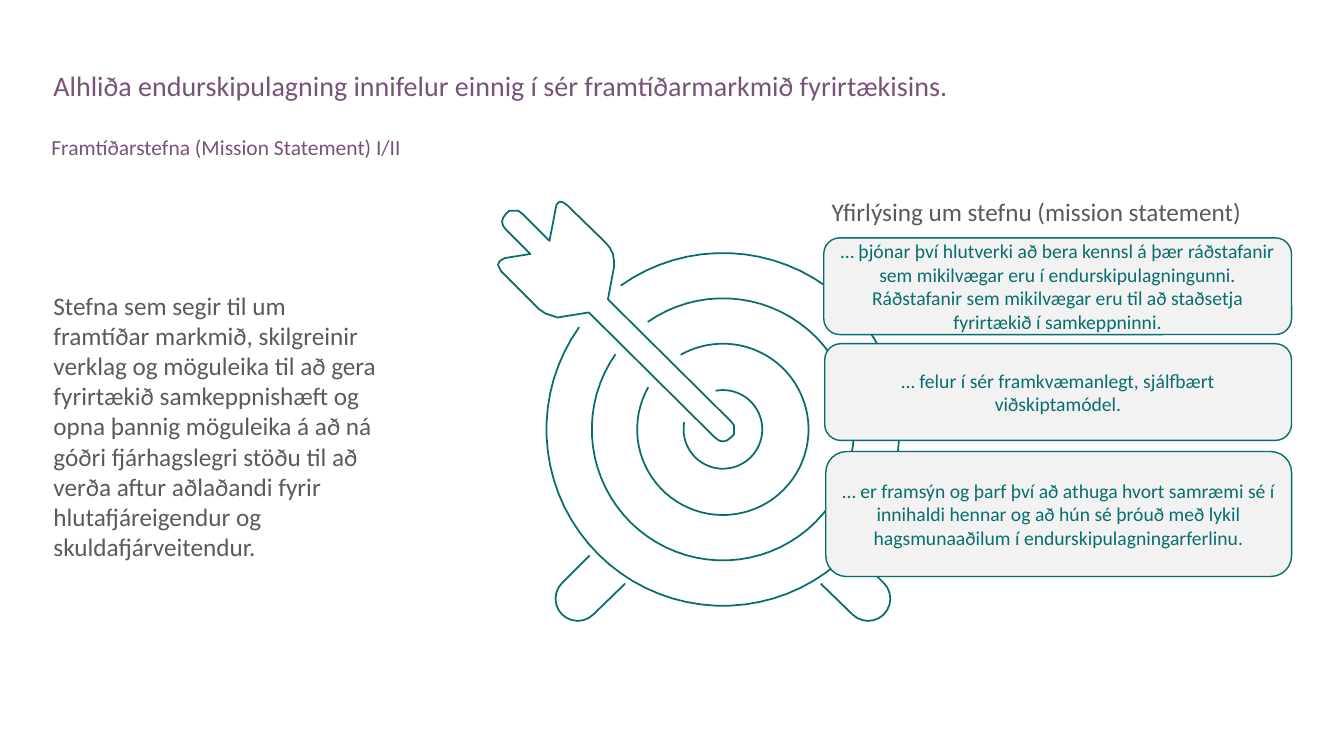
from math import cos, radians, sin

from pptx import Presentation
from pptx.dml.color import RGBColor
from pptx.enum.shapes import MSO_SHAPE
from pptx.enum.text import MSO_ANCHOR, MSO_AUTO_SIZE, PP_ALIGN
from pptx.util import Inches, Pt

PURPLE = RGBColor(0x79, 0x52, 0x7B)
GREY = RGBColor(0x59, 0x5A, 0x59)
TEAL = RGBColor(0x08, 0x6D, 0x6E)
LIGHT = RGBColor(0xF2, 0xF2, 0xF2)
ROUNDED = MSO_SHAPE.ROUNDED_RECTANGLE
TOP, MIDDLE = MSO_ANCHOR.TOP, MSO_ANCHOR.MIDDLE
LEFT, CENTER = PP_ALIGN.LEFT, PP_ALIGN.CENTER
NO_AUTOSIZE = MSO_AUTO_SIZE.NONE

prs = Presentation()
prs.slide_width, prs.slide_height = Inches(13.33), Inches(7.5)
s = prs.slides.add_slide(prs.slide_layouts.get_by_name("Comparison"))


def write(sp, text, size, color, anchor=TOP, align=LEFT, spacing=1.0):
    tf = sp.text_frame
    tf.word_wrap = True
    tf.auto_size = NO_AUTOSIZE
    tf.vertical_anchor = anchor
    p = tf.paragraphs[0]
    p.alignment, p.line_spacing, p.space_before = align, spacing, Pt(0)
    r = p.add_run()
    r.text = text
    font = {"name": "Calibri", "size": Pt(size), "bold": False}
    for key, value in font.items():
        setattr(r.font, key, value)
    r.font.color.rgb = color


def outline(points, close=False):
    points = [(Inches(x), Inches(y)) for x, y in points]
    builder = s.shapes.build_freeform(*points[0])
    builder.add_line_segments(points[1:], close=close)
    sp = builder.convert_to_shape()
    sp.shadow.inherit = False
    sp.fill.background()
    sp.line.color.rgb = TEAL
    sp.line.width = Pt(1.25)


# Title, subtitle and description
ph = {p.placeholder_format.idx: p for p in s.placeholders}
texts = [
    (0, (0.43, 0.67, 12.54, 0.64),
     "Alhliða endurskipulagning innifelur einnig í sér framtíðarmarkmið fyrirtækisins.",
     {"size": 20, "color": PURPLE, "spacing": 0.9}),
    (1, (0.41, 1.35, 12.56, 0.28), "Framtíðarstefna (Mission Statement) I/II",
     {"size": 15.3, "color": PURPLE, "spacing": 0.7}),
    (3, (0.43, 1.79, 3.49, 4.87),
     "Stefna sem segir til um framtíðar markmið, skilgreinir verklag og möguleika "
     "til að gera fyrirtækið samkeppnishæft og opna þannig möguleika á að ná góðri "
     "fjárhagslegri stöðu til að verða aftur aðlaðandi fyrir hlutafjáreigendur og "
     "skuldafjárveitendur.",
     {"size": 18, "color": GREY, "anchor": MIDDLE}),
]
for idx, box, text, style in texts:
    sp = ph[idx]
    sp.left, sp.top, sp.width, sp.height = [Inches(v) for v in box]
    write(sp, text, **style)
for idx in (2, 4):
    ph[idx].element.getparent().remove(ph[idx].element)

# Target rings, each open at the upper left (radius, half of the gap in degrees)
CX, CY = 7.17, 4.26
for radius, gap in [(1.75, 9.6), (1.3, 10), (0.85, 15.5), (0.39, 34.4)]:
    steps = 72
    sweep = (360 - 2 * gap) / steps
    angles = [radians(225 + gap + i * sweep) for i in range(steps + 1)]
    outline([(CX + radius * cos(a), CY + radius * sin(a)) for a in angles])

# Target legs, mirrored about the centre
foot = [radians(a) for a in range(-45, 136, 15)]
leg = [(1.32, 5.51)]
leg += [(1.44 + 0.22 * cos(a), 5.94 + 0.22 * sin(a)) for a in foot]
leg += [(0.97, 5.79)]
for side in (1, -1):
    outline([(CX + side * dx, y) for dx, y in leg])

# Arrow: tail notches, right feather, shaft and tip, left feather
outline([
    (5.01, 2.56), (5.26, 2.52), (5.02, 2.28), (4.99, 2.24), (4.98, 2.2),
    (4.99, 2.16), (5.02, 2.12), (5.05, 2.09), (5.1, 2.09), (5.14, 2.09),
    (5.18, 2.12), (5.45, 2.39), (5.51, 2.08), (5.52, 2.03), (5.55, 2),
    (5.59, 2.01), (5.63, 2.04), (6.01, 2.41), (6.05, 2.46), (6.08, 2.52),
    (6.09, 2.59), (6.09, 2.65), (6.03, 2.97), (7.25, 4.18), (7.28, 4.22),
    (7.28, 4.26), (7.28, 4.31), (7.25, 4.34), (7.21, 4.37), (7.17, 4.38),
    (7.13, 4.37), (7.09, 4.34), (5.84, 3.1), (5.59, 3.14), (5.53, 3.15),
    (5.47, 3.13), (5.41, 3.11), (5.35, 3.07), (4.97, 2.69), (4.95, 2.65),
    (4.94, 2.63), (4.95, 2.6), (4.97, 2.58),
], close=True)

# Heading above the statement boxes
sp = s.shapes.add_textbox(Inches(8.15), Inches(1.9), Inches(4.64), Inches(0.4))
write(sp, "Yfirlýsing um stefnu (mission statement)", 18, GREY)

# Statement boxes, aligned on the right
RIGHT = 12.81
statements = [
    (8.17, 2.36, 0.96,
     "… þjónar því hlutverki að bera kennsl á þær ráðstafanir sem mikilvægar eru í "
     "endurskipulagningunni. Ráðstafanir sem mikilvægar eru til að staðsetja "
     "fyrirtækið í samkeppninni."),
    (8.18, 3.41, 0.96, "… felur í sér framkvæmanlegt, sjálfbært viðskiptamódel."),
    (8.19, 4.48, 1.24,
     "… er framsýn og þarf því að athuga hvort samræmi sé í innihaldi hennar og að "
     "hún sé þróuð með lykil hagsmunaaðilum í endurskipulagningarferlinu."),
]
for x, y, height, text in statements:
    sp = s.shapes.add_shape(ROUNDED, Inches(x), Inches(y), Inches(RIGHT - x), Inches(height))
    sp.shadow.inherit = False
    sp.fill.solid()
    sp.fill.fore_color.rgb = LIGHT
    sp.line.color.rgb = TEAL
    sp.line.width = Pt(1)
    write(sp, text, 14, TEAL, MIDDLE, CENTER)

prs.save("out.pptx")
